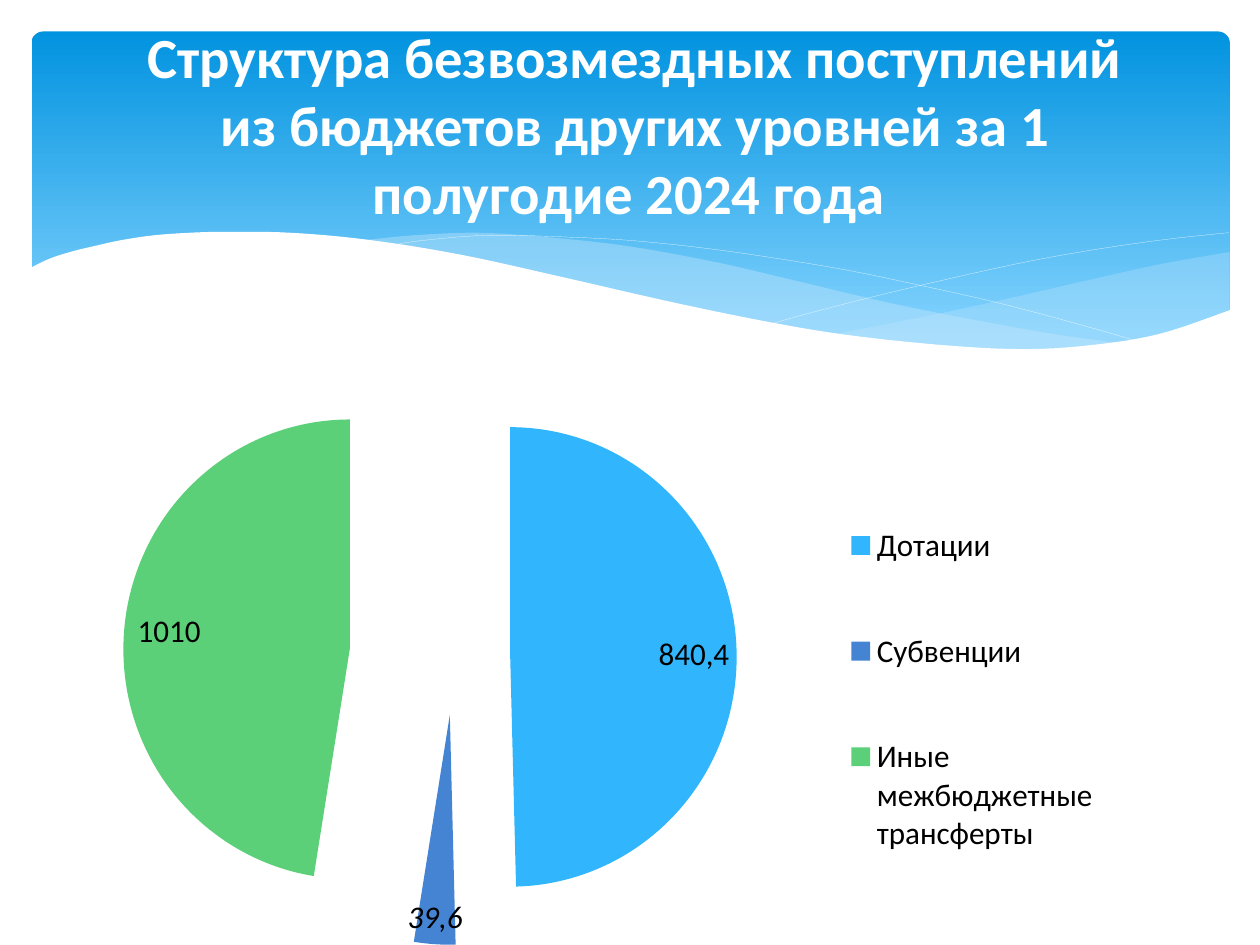
"""Build a slide with a wave banner and an exploded pie of budget transfers."""
from lxml.etree import SubElement
from pptx import Presentation
from pptx.chart.data import CategoryChartData
from pptx.dml.color import RGBColor
from pptx.enum.chart import XL_CHART_TYPE as ChartType
from pptx.enum.chart import XL_LABEL_POSITION as LabelPosition
from pptx.enum.chart import XL_LEGEND_POSITION as LegendPosition
from pptx.enum.shapes import MSO_SHAPE as Preset
from pptx.enum.text import MSO_ANCHOR as Anchor
from pptx.enum.text import PP_ALIGN as Align
from pptx.oxml import parse_xml
from pptx.oxml.ns import nsdecls, qn
from pptx.util import Pt

WHITE = RGBColor(0xFF, 0xFF, 0xFF)
BLACK = RGBColor(0, 0, 0)
SKY = RGBColor(0x02, 0x93, 0xE0)
PALE_SKY = RGBColor(0x83, 0xD3, 0xFE)
MIST = RGBColor(0xC6, 0xE7, 0xFC)
FONT = "Calibri"

TITLE = ("Структура безвозмездных поступлений\v"
         "из бюджетов других уровней за 1 полугодие 2024 года ")
SLICES = [
    ("Дотации", 1931, "840,4", RGBColor(0x31, 0xB6, 0xFD), 25, False),
    ("Субвенции", 115, "39,6", RGBColor(0x45, 0x84, 0xD3), 25, True),
    ("Иные \nмежбюджетные трансферты", 1848, "1010",
     RGBColor(0x5B, 0xD0, 0x78), 46, False),
]
PLOT_AREA = {"x": 0.02, "y": 0.09, "w": 0.6, "h": 0.91}
LEGEND_AREA = {"x": 0.71, "y": 0.23, "w": 0.27, "h": 0.73}

RIGHT_WAVE = [
    [(702.7, 144), (663, 151), (620, 160.5), (561, 174), (508, 185), (476, 191)],
    [(476, 191), (508, 195), (545, 198.5), (586, 200), (628, 197), (663, 191),
     (683, 185), (702.7, 178)],
]
MIDDLE_WAVE = [
    [(206, 137.5), (236, 134.5), (274, 133), (318, 136), (361, 141), (410, 150),
     (453, 160), (508, 173), (558, 183), (603, 191), (643, 196.5)],
    [(643, 196.5), (611, 199.5), (573, 200), (530, 198), (490, 193),
     (433, 183.5), (382, 173), (323, 160), (276, 149), (233, 141), (206, 137.5)],
]
FALLING_LINE = [
    [(222.5, 140.5), (241, 137.5), (279, 134.5), (324, 135.5), (367, 138),
     (419, 144), (479, 153.5), (523, 162.5), (572, 173.5), (626, 188), (653, 196)],
]
RISING_LINE = [
    [(441, 185), (470, 177), (518, 165), (580, 151), (623.5, 143), (665, 137),
     (702, 133)],
]
WHITE_WAVE = [
    [(703.5, 177), (662, 191), (621, 197.5), (582.5, 199.5), (536, 197),
     (481, 191), (434, 183), (381, 172), (322, 158.5), (263, 145.5), (210, 137),
     (165.5, 133), (127.5, 132.5), (105, 133.2), (86, 134.7), (68, 137.5),
     (55, 140.4), (42, 143.5), (29, 147.6), (16.5, 153.5)],
    [(16.5, 237), (703.5, 237)],
]
WAVES = [
    (RIGHT_WAVE, MIST, 29),
    (MIDDLE_WAVE, MIST, 40),
    (FALLING_LINE, None, 100),
    (RISING_LINE, None, 100),
    (WHITE_WAVE, WHITE, 100),
]


def smooth(knots, steps=6):
    """Return points of a Catmull-Rom curve through the knots."""
    padded = [knots[0], *knots, knots[-1]]
    points = [knots[0]]
    for a, b, c, d in zip(padded, padded[1:], padded[2:], padded[3:]):
        for step in range(1, steps + 1):
            t = step / steps
            points.append(tuple(
                (2 * q + (r - p) * t + (2 * p - 5 * q + 4 * r - s) * t ** 2
                 + (3 * q - p - 3 * r + s) * t ** 3) / 2
                for p, q, r, s in zip(a, b, c, d)))
    return points


def add_wave(page, curves, color, opacity):
    """Draw a filled wave, or a white hairline when there is no colour."""
    points = [(x * 100, y * 100) for knots in curves for x, y in smooth(knots)]
    builder = page.shapes.build_freeform(*points[0], scale=Pt(1) / 100)
    builder.add_line_segments(points[1:], close=color is not None)
    wave = builder.convert_to_shape()
    wave.shadow.inherit = False
    if color is None:
        wave.fill.background()
        wave.line.color.rgb = WHITE
        wave.line.width = Pt(0.1)
        return
    wave.fill.solid()
    wave.fill.fore_color.rgb = color
    wave.line.fill.background()
    if opacity < 100:
        tint = wave.fill._xPr.find(".//" + qn("a:srgbClr"))
        SubElement(tint, qn("a:alpha")).set("val", str(opacity * 1000))


def add_banner(page):
    """Draw the gradient banner."""
    banner = page.shapes.add_shape(
        Preset.ROUNDED_RECTANGLE, Pt(18), Pt(18), Pt(684.7), Pt(194.4))
    banner.adjustments[0] = 0.034
    banner.shadow.inherit = False
    banner.line.fill.background()
    banner.fill.gradient()
    banner.fill.gradient_angle = 270
    for stop, place, color in zip(
            banner.fill.gradient_stops, (0, 0.9), (SKY, PALE_SKY)):
        stop.position = place
        stop.color.rgb = color


def layout(area, inner=False):
    """Return a manual chart layout for the area."""
    target = '<c:layoutTarget val="inner"/>' if inner else ""
    modes = "".join(f'<c:{key}Mode val="edge"/>' for key in "xy")
    sizes = "".join(f'<c:{key} val="{value}"/>' for key, value in area.items())
    return parse_xml(f'<c:layout {nsdecls("c")}><c:manualLayout>{target}{modes}'
                     f'{sizes}</c:manualLayout></c:layout>')


def add_pie(page):
    """Add the exploded pie with its labels and legend."""
    data = CategoryChartData()
    data.categories = [entry[0] for entry in SLICES]
    data.add_series("Series 1", [entry[1] for entry in SLICES])
    chart = page.shapes.add_chart(
        ChartType.PIE, Pt(70.5), Pt(179.3), Pt(572.4), Pt(360.7), data).chart
    chart.has_title = False
    chart.font.name = FONT
    chart.font.size = Pt(18)
    chart.font.color.rgb = BLACK
    chart.has_legend = True
    chart.legend.position = LegendPosition.RIGHT
    chart.legend.include_in_layout = False
    chart.legend._element.find(qn("c:legendPos")).addnext(layout(LEGEND_AREA))

    plot_area = chart._chartSpace.chart.plotArea
    for old in plot_area.findall(qn("c:layout")):
        plot_area.remove(old)
    plot_area.insert(0, layout(PLOT_AREA, inner=True))

    plot = chart.plots[0]
    plot.vary_by_categories = True
    series = plot.series[0]
    for index, (_, _, label, color, explosion, italic) in enumerate(SLICES):
        point = series.points[index]
        point.format.fill.solid()
        point.format.fill.fore_color.rgb = color
        point.format.line.fill.background()
        shift = parse_xml(f'<c:explosion {nsdecls("c")} val="{explosion}"/>')
        series._element.findall(qn("c:dPt"))[index].find(
            qn("c:spPr")).addprevious(shift)
        tag = point.data_label
        tag.text_frame.text = label
        font = tag.text_frame.paragraphs[0].runs[0].font
        font.name, font.size, font.italic = FONT, Pt(18), italic
        font.color.rgb = BLACK
        tag.position = LabelPosition.INSIDE_END
    series.data_labels.show_value = True
    series._element.find(qn("c:dPt")).addprevious(
        parse_xml(f'<c:explosion {nsdecls("c")} val="25"/>'))


def add_title(page):
    """Add the centred title over the banner."""
    box = page.shapes.add_textbox(Pt(42.5), Pt(20.9), Pt(640.8), Pt(147.6))
    frame = box.text_frame
    frame.word_wrap = True
    frame.vertical_anchor = Anchor.MIDDLE
    frame.margin_top, frame.margin_bottom = Pt(0), Pt(48)
    para = frame.paragraphs[0]
    para.text = TITLE
    para.alignment = Align.CENTER
    para.font.name, para.font.size, para.font.bold = FONT, Pt(32.4), True
    para.font.color.rgb = WHITE


def main():
    """Assemble and save the deck."""
    deck = Presentation()
    deck.slide_width, deck.slide_height = Pt(720), Pt(540)
    page = deck.slides.add_slide(deck.slide_layouts[6])
    add_banner(page)
    for wave in WAVES:
        add_wave(page, *wave)
    add_pie(page)
    add_title(page)
    deck.save("out.pptx")


if __name__ == "__main__":
    main()
